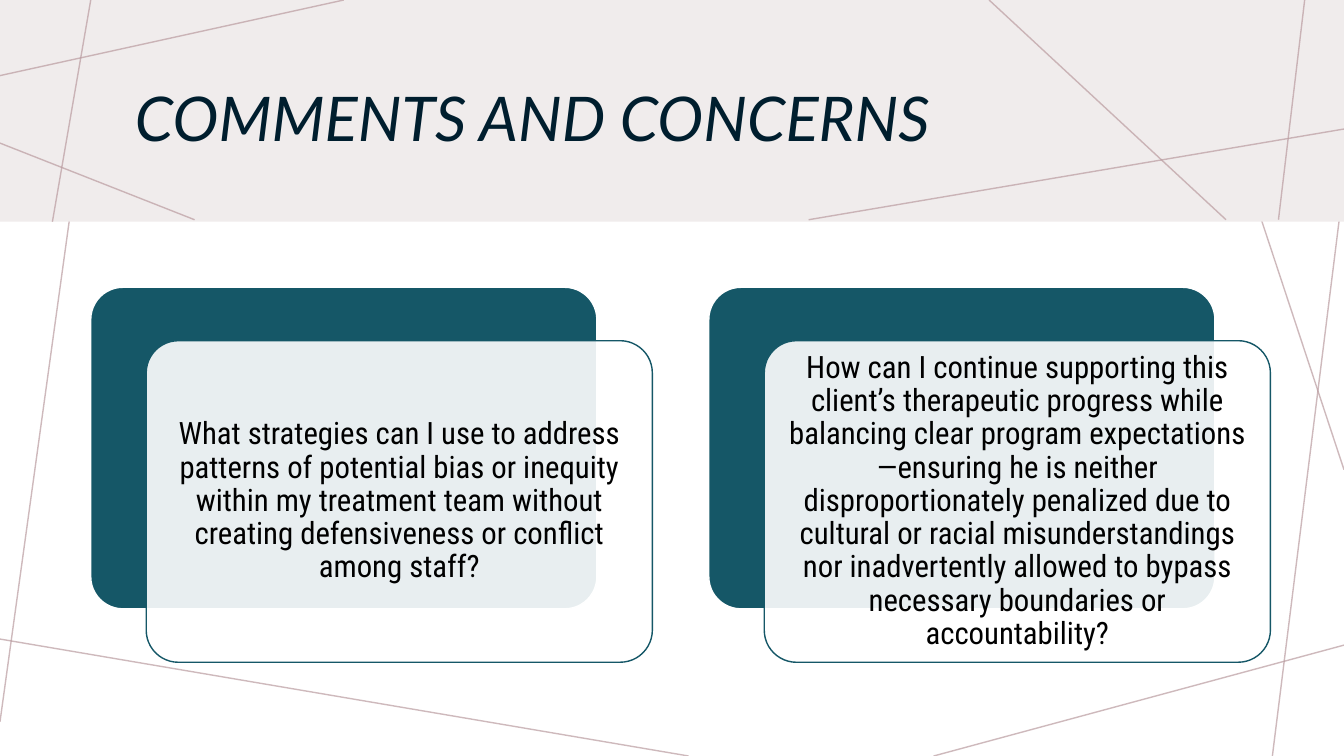
from dataclasses import dataclass

from lxml import etree
from pptx import Presentation
from pptx.dml.color import RGBColor
from pptx.enum.shapes import MSO_CONNECTOR, MSO_SHAPE
from pptx.enum.text import MSO_ANCHOR, PP_ALIGN
from pptx.oxml.ns import qn
from pptx.util import Inches, Pt

STRAIGHT = MSO_CONNECTOR.STRAIGHT
RECTANGLE = MSO_SHAPE.RECTANGLE
ROUNDED = MSO_SHAPE.ROUNDED_RECTANGLE
MIDDLE = MSO_ANCHOR.MIDDLE
LEFT = PP_ALIGN.LEFT
CENTER = PP_ALIGN.CENTER


@dataclass(frozen=True)
class Theme:
    """Colours, fonts and type sizes of the slide."""
    band: str = "F0ECEC"
    accent_line: str = "BA9CA0"
    teal: str = "155767"
    white: str = "FFFFFF"
    title: str = "001E2E"
    body: str = "000000"
    title_font: str = "Lato"
    body_font: str = "Roboto Condensed"
    title_size: int = 44
    body_size: int = 22


THEME = Theme()
SLIDE_WIDTH, SLIDE_HEIGHT = 13.33, 7.5
CARD_WIDTH, CARD_HEIGHT = 5.02, 3.19
CARD_TOP, CARD_LEFT, CARD_PITCH = 2.85, 0.9, 6.13
PANEL_SHIFT_X, PANEL_SHIFT_Y = 0.55, 0.53
TEXT_MARGIN = 0.09

BACKGROUND_LINES = [
    (0.99, 0, 0, 7.16),
    (6.83, 7.5, 0, 6.34),
    (13.33, 6.4, 9.26, 7.5),
    (13.33, 1.8, 12.62, 7.5),
    (13.33, 4.66, 11.79, 0),
]
BAND_LINES = [
    (3.41, 0, 0, 0.75),
    (0.9, 0, 0.52, 2.2),
    (1.93, 2.18, 0, 1.42),
    (13.33, 1.28, 8.02, 2.18),
    (12.16, 2.18, 9.81, 0),
    (12.94, 0, 12.68, 2.18),
]
QUESTIONS = [
    "What strategies can I use to address patterns of potential bias or inequity "
    "within my treatment team without creating defensiveness or conflict among staff?",
    "How can I continue supporting this client’s therapeutic progress while balancing "
    "clear program expectations—ensuring he is neither disproportionately penalized due "
    "to cultural or racial misunderstandings nor inadvertently allowed to bypass "
    "necessary boundaries or accountability?",
]


def set_opacity(fill, percent):
    """Make a solid fill partly transparent."""
    color = fill._xPr.find(qn("a:solidFill"))[0]
    etree.SubElement(color, qn("a:alpha"), val=str(percent * 1000))


def add_accent_lines(slide, lines):
    """Draw thin decorative lines, each given by its two ends."""
    for ends in lines:
        connector = slide.shapes.add_connector(STRAIGHT, *map(Inches, ends))
        connector.line.color.rgb = RGBColor.from_string(THEME.accent_line)
        connector.line.width = Pt(1)
        set_opacity(connector.line.fill, 70)
        etree.SubElement(connector._element.spPr, qn("a:effectLst"))


def add_block(slide, kind, box, fill, outline=None, opacity=100):
    """Add a filled shape with an optional outline."""
    shape = slide.shapes.add_shape(kind, *map(Inches, box))
    shape.shadow.inherit = False
    shape.fill.solid()
    shape.fill.fore_color.rgb = RGBColor.from_string(fill)
    if opacity < 100:
        set_opacity(shape.fill, opacity)
    if outline:
        shape.line.color.rgb = RGBColor.from_string(outline)
        shape.line.width = Pt(1)
    else:
        shape.line.fill.background()
    if kind == ROUNDED:
        shape.adjustments[0] = 0.1
    return shape


def add_text(slide, text, box, *, font, size, color, italic=False, align=LEFT, margin=0.1):
    """Add a wrapped, vertically centred text box."""
    frame = slide.shapes.add_textbox(*map(Inches, box)).text_frame
    frame.word_wrap = True
    frame.vertical_anchor = MIDDLE
    frame.margin_left = frame.margin_right = Inches(margin)
    frame.margin_top = frame.margin_bottom = Inches(min(margin, 0.09))
    paragraph = frame.paragraphs[0]
    paragraph.alignment = align
    paragraph.line_spacing = 0.9
    run = paragraph.add_run()
    run.text = text
    run.font.name = font
    run.font.size = Pt(size)
    run.font.italic = italic
    run.font.color.rgb = RGBColor.from_string(color)


def add_question_card(slide, left, question):
    """Add a teal card with a translucent panel that holds a question."""
    add_block(slide, ROUNDED, (left, CARD_TOP, CARD_WIDTH, CARD_HEIGHT),
              THEME.teal, outline=THEME.white)
    panel_left, panel_top = left + PANEL_SHIFT_X, CARD_TOP + PANEL_SHIFT_Y
    add_block(slide, ROUNDED, (panel_left, panel_top, CARD_WIDTH, CARD_HEIGHT),
              THEME.white, outline=THEME.teal, opacity=90)
    text_box = (panel_left + TEXT_MARGIN, panel_top + TEXT_MARGIN,
                CARD_WIDTH - 2 * TEXT_MARGIN, CARD_HEIGHT - 2 * TEXT_MARGIN)
    add_text(slide, question, text_box, font=THEME.body_font, size=THEME.body_size,
             color=THEME.body, align=CENTER, margin=TEXT_MARGIN)


def main():
    """Build the slide and save it."""
    presentation = Presentation()
    presentation.slide_width = Inches(SLIDE_WIDTH)
    presentation.slide_height = Inches(SLIDE_HEIGHT)
    slide = presentation.slides.add_slide(presentation.slide_layouts[6])
    add_accent_lines(slide, BACKGROUND_LINES)
    add_block(slide, RECTANGLE, (0, 0, SLIDE_WIDTH, 2.2), THEME.band)
    add_accent_lines(slide, BAND_LINES)
    add_text(slide, "COMMENTS AND CONCERNS", (1.24, 0.54, 11.01, 1.34),
             font=THEME.title_font, size=THEME.title_size, color=THEME.title, italic=True)
    for index, question in enumerate(QUESTIONS):
        add_question_card(slide, CARD_LEFT + index * CARD_PITCH, question)
    presentation.save("out.pptx")


if __name__ == "__main__":
    main()
